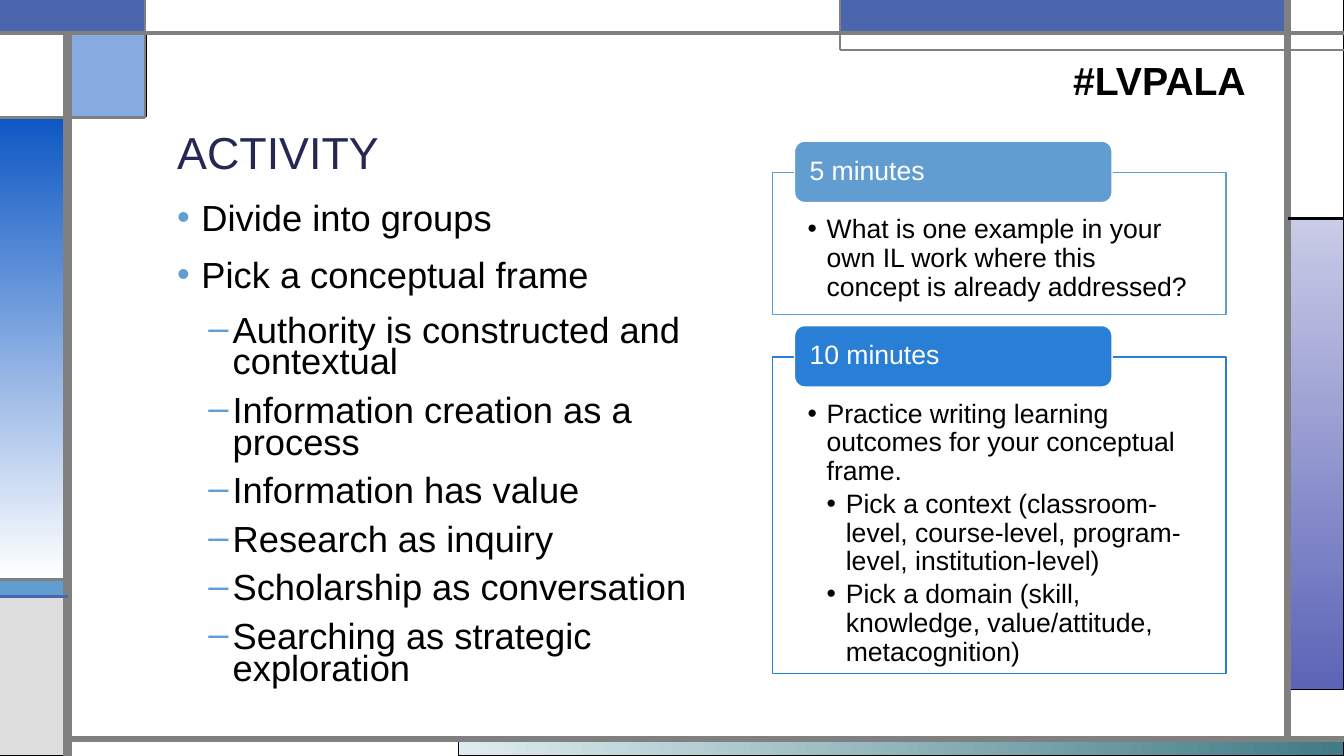
"""Builds the ACTIVITY workshop slide with its frame, outline and timed task cards."""
from lxml.etree import SubElement
from pptx import Presentation
from pptx.dml.color import RGBColor
from pptx.enum.shapes import MSO_CONNECTOR as CONNECTOR, MSO_SHAPE as SHAPE
from pptx.enum.text import MSO_ANCHOR as ANCHOR, PP_ALIGN as ALIGN
from pptx.oxml.ns import qn
from pptx.util import Inches, Pt

BLACK = RGBColor(0x00, 0x00, 0x00)
WHITE = RGBColor(0xFF, 0xFF, 0xFF)
GRAY = RGBColor(0x80, 0x80, 0x80)
PALE_GRAY = RGBColor(0xDD, 0xDD, 0xDD)
NAVY = RGBColor(0x24, 0x28, 0x52)
INDIGO = RGBColor(0x4A, 0x66, 0xAC)
SKY = RGBColor(0x62, 0x9D, 0xD1)
AZURE = RGBColor(0x29, 0x7F, 0xD5)
COBALT = RGBColor(0x0E, 0x58, 0xC4)
MIST = RGBColor(0xDE, 0xEC, 0xEF)
TEAL = RGBColor(0x41, 0x7B, 0x85)
LILAC = RGBColor(0xC9, 0xCB, 0xE7)
VIOLET = RGBColor(0x5C, 0x64, 0xB7)

PANELS = [
    ((4.55, 7.33, 8.78, 0.17), (MIST, TEAL, 0), BLACK, 0.75),
    ((12.77, 2.17, 0.56, 4.67), (LILAC, VIOLET, 270), BLACK, 0.75),
    ((0, 5.75, 0.67, 0.17), SKY, BLACK, 0.75),
    ((0, 5.92, 0.67, 1.58), PALE_GRAY, BLACK, 0.75),
    ((12.77, 0, 0.56, 2.17), WHITE, BLACK, 0.75),
    ((8.33, 0, 4.44, 0.33), INDIGO, AZURE, 0.75),
    ((0.67, 0.33, 0.78, 0.83), COBALT, BLACK, 0.75),
    ((0, 1.17, 0.67, 4.58), (COBALT, WHITE, 270), BLACK, 0.75),
    ((0, 0.33, 0.67, 0.83), WHITE, BLACK, 0.75),
    ((0, 0, 1.44, 0.33), INDIGO, INDIGO, 1.5),
    ((1.44, 0, 6.89, 0.33), WHITE, GRAY, 0.75),
]
RULES = [
    ((0.67, 7.5, 0.67, 0.33), GRAY, 6),
    ((0.67, 7.33, 13.33, 7.33), GRAY, 4.5),
    ((12.77, 7.33, 12.77, 0), GRAY, 4.5),
    ((0, 0.33, 13.33, 0.33), GRAY, 3),
    ((13.33, 0.5, 8.33, 0.5), GRAY, 1.5),
    ((8.33, 0.5, 8.33, 0), GRAY, 1.5),
    ((12.77, 2.17, 13.33, 2.17), BLACK, 2.25),
    ((1.44, 0, 1.44, 1.17), GRAY, 1.5),
    ((1.44, 1.17, 0, 1.17), GRAY, 2.25),
    ((0.67, 5.75, 0, 5.75), GRAY, 2.25),
    ((0.67, 5.92, 0, 5.92), INDIGO, 2.25),
]
STEPS = ["Divide into groups", "Pick a conceptual frame"]
FRAMES = [
    "Authority is constructed and contextual",
    "Information creation as a process",
    "Information has value",
    "Research as inquiry",
    "Scholarship as conversation",
    "Searching as strategic exploration",
]
CARDS = [
    ("5 minutes", 1.71, 1.41, SKY, [
        (1, "What is one example in your own IL work where this concept is already addressed?"),
    ]),
    ("10 minutes", 3.54, 3.14, AZURE, [
        (1, "Practice writing learning outcomes for your conceptual frame."),
        (2, "Pick a context (classroom-level, course-level, program-level, institution-level)"),
        (2, "Pick a domain (skill, knowledge, value/attitude, metacognition)"),
    ]),
]


def add_panel(slide, box, fill, outline, width, kind=SHAPE.RECTANGLE):
    """Add an outlined shape filled with a colour or a (start, end, angle) gradient."""
    panel = slide.shapes.add_shape(kind, *map(Inches, box))
    panel.shadow.inherit = False
    if isinstance(fill, RGBColor):
        panel.fill.solid()
        panel.fill.fore_color.rgb = fill
    else:
        start, end, angle = fill
        panel.fill.gradient()
        panel.fill.gradient_angle = angle
        for stop, color in zip(panel.fill.gradient_stops, (start, end)):
            stop.color.rgb = color
    panel.line.color.rgb = outline
    panel.line.width = Pt(width)
    return panel


def set_opacity(panel, percent):
    """Make a solid fill partly transparent."""
    color = panel.fill._xPr.find(qn("a:solidFill"))[0]
    SubElement(color, qn("a:alpha"), val=str(percent * 1000))


def add_rule(slide, ends, color, width):
    """Add a straight line without a shadow."""
    rule = slide.shapes.add_connector(CONNECTOR.STRAIGHT, *map(Inches, ends))
    rule.line.color.rgb = color
    rule.line.width = Pt(width)
    SubElement(rule._element.spPr, qn("a:effectLst"))


def set_frame(frame, anchor, margins=(0.1, 0.05, 0.1, 0.05)):
    """Wrap a text frame and set its anchor and margins."""
    frame.word_wrap = True
    frame.vertical_anchor = anchor
    (frame.margin_left, frame.margin_top,
     frame.margin_right, frame.margin_bottom) = map(Inches, margins)
    return frame


def add_text_box(slide, box, anchor):
    """Add an empty wrapping text box and return its frame."""
    return set_frame(slide.shapes.add_textbox(*map(Inches, box)).text_frame, anchor)


def add_paragraph(frame, text, size, color, spacing=1.0, before=0, after=0,
                  align=ALIGN.LEFT):
    """Write a paragraph, using the empty first one when it is free."""
    first = frame.paragraphs[0]
    paragraph = frame.add_paragraph() if first.runs else first
    paragraph.text = text
    paragraph.alignment = align
    paragraph.line_spacing = spacing
    paragraph.space_before = Pt(before)
    paragraph.space_after = Pt(after)
    paragraph.font.name = "Arial"
    paragraph.font.size = Pt(size)
    paragraph.font.color.rgb = color
    return paragraph


def set_bullet(paragraph, mark, indent, hang, color=BLACK):
    """Give a paragraph a coloured bullet and a hanging indent."""
    properties = paragraph._p.get_or_add_pPr()
    properties.set("marL", str(Inches(indent)))
    properties.set("indent", str(-Inches(hang)))
    bullet_color = SubElement(properties, qn("a:buClr"))
    SubElement(bullet_color, qn("a:srgbClr"), val=str(color))
    SubElement(properties, qn("a:buFont"), typeface="Arial")
    SubElement(properties, qn("a:buChar"), char=mark)


def add_outline(slide):
    """Add the steps and the conceptual frames below them."""
    outline = add_text_box(slide, (1.66, 2, 5.83, 4.83), ANCHOR.TOP)
    for step in STEPS:
        after = 8 if step == STEPS[-1] else 0
        paragraph = add_paragraph(outline, step, 25.9, BLACK, 0.73, 18, after)
        set_bullet(paragraph, "•", 0.24, 0.24, SKY)
    for concept in FRAMES:
        paragraph = add_paragraph(outline, concept, 25.9, BLACK, 0.73, 8, 4)
        set_bullet(paragraph, "–", 0.55, 0.24, SKY)


def add_card(slide, duration, top, height, color, tasks):
    """Add a task box with its duration tab on the top edge."""
    body = add_panel(slide, (7.66, top, 4.5, height), WHITE, color, 1)
    set_opacity(body, 90)
    frame = set_frame(body.text_frame, ANCHOR.TOP, (0.35, 0.43, 0.35, 0.15))
    for level, task in tasks:
        paragraph = add_paragraph(frame, task, 19, BLACK, 0.9, after=3)
        set_bullet(paragraph, "•", 0.19 * level, 0.19)
    tab = add_panel(slide, (7.88, top - 0.31, 3.15, 0.61), color, WHITE, 1,
                    SHAPE.ROUNDED_RECTANGLE)
    label = set_frame(tab.text_frame, ANCHOR.MIDDLE, (0.12, 0, 0.12, 0))
    add_paragraph(label, duration, 19, WHITE, 0.9)


def main():
    """Build and save the slide."""
    deck = Presentation()
    deck.slide_width, deck.slide_height = Inches(13.33), Inches(7.5)
    slide = deck.slides.add_slide(deck.slide_layouts[6])
    for box, fill, outline, width in PANELS:
        panel = add_panel(slide, box, fill, outline, width)
        if fill == COBALT:
            set_opacity(panel, 50)
    for rule in RULES:
        add_rule(slide, *rule)
    for card in CARDS:
        add_card(slide, *card)
    add_outline(slide)
    title = add_text_box(slide, (1.66, 0.58, 10.5, 1.25), ANCHOR.BOTTOM)
    add_paragraph(title, "ACTIVITY", 32, NAVY, 0.9)
    hashtag = add_text_box(slide, (10.25, 0.51, 2.5, 0.57), ANCHOR.MIDDLE)
    add_paragraph(hashtag, "#LVPALA", 28, BLACK, align=ALIGN.CENTER).font.bold = True
    deck.save("out.pptx")


if __name__ == "__main__":
    main()
